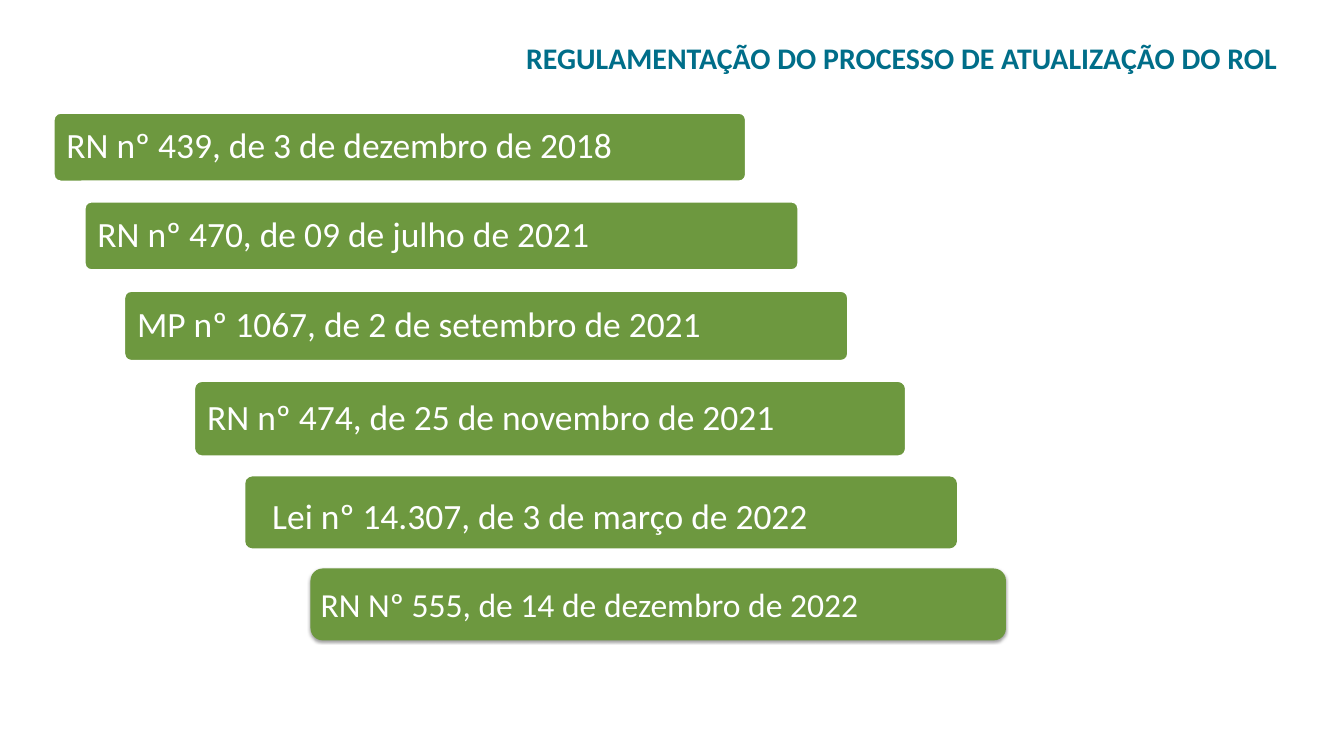
import pptx
import pptx.util
import pptx.dml.color
import pptx.enum.shapes
import pptx.enum.text
from lxml import etree

Inches, Pt = pptx.util.Inches, pptx.util.Pt
Align = pptx.enum.text.PP_ALIGN

THEME = {
    "font": "Calibri",
    "teal": "006E89",
    "green": "6D983F",
    "white": "FFFFFF",
    "black": "000000",
    "title": 32,
    "step": 38,
    "last": 36,
}

TITLE = "REGULAMENTAÇÃO DO PROCESSO DE ATUALIZAÇÃO DO ROL"

BASE = {"size": THEME["step"], "space": 0.9, "inset": (0.16, 0, 0.16, 0)}
LAW = {**BASE, "inset": (0.37, 0.16, 0.16, 0)}
LAST = {"size": THEME["last"]}

STEPS = [
    ("RN nº 439, de 3 de dezembro de 2018", (0.8, 1.68, 10.3, 1.02), 0.1, True, BASE),
    ("RN nº 470, de 09 de julho de 2021", (1.26, 3, 10.62, 1.02), 0.1, True, BASE),
    ("MP nº 1067, de 2 de setembro de 2021", (1.85, 4.33, 10.77, 1.04), 0.1, True, BASE),
    ("RN nº 474, de 25 de novembro de 2021", (2.89, 5.67, 10.59, 1.12), 0.1, True, BASE),
    ("Lei nº 14.307, de 3 de março de 2022", (3.65, 7.09, 10.59, 1.07), 0.1, False, LAW),
    ("RN Nº 555, de 14 de dezembro de 2022", (4.62, 8.46, 10.35, 1.07), 0.17, False, LAST),
]


def color(name):
    return pptx.dml.color.RGBColor.from_string(THEME[name])


def write(shape, text, size, tint="white", bold=False, align=Align.LEFT,
          space=1.0, inset=(0.1, 0.05, 0.1, 0.05)):
    frame = shape.text_frame
    frame.word_wrap = True
    frame.vertical_anchor = pptx.enum.text.MSO_ANCHOR.MIDDLE
    left, top, right, bottom = map(Inches, inset)
    frame.margin_left, frame.margin_top = left, top
    frame.margin_right, frame.margin_bottom = right, bottom
    para = frame.paragraphs[0]
    para.alignment = align
    para.line_spacing = space
    run = para.add_run()
    run.text = text
    run.font.name = THEME["font"]
    run.font.size = Pt(size)
    run.font.bold = bold
    run.font.color.rgb = color(tint)


def shade(shape):
    space = pptx.oxml.ns.nsdecls("a")
    glow = etree.fromstring(
        f'<a:outerShdw {space} blurRad="{Pt(3.1)}" dist="{Pt(1.6)}" dir="5400000" '
        f'rotWithShape="0"><a:srgbClr val="{THEME["black"]}">'
        '<a:alpha val="38000"/></a:srgbClr></a:outerShdw>'
    )
    shape.element.spPr.find(pptx.oxml.ns.qn("a:effectLst")).append(glow)


def add_bar(slide, box, curve, edge):
    kind = pptx.enum.shapes.MSO_SHAPE.ROUNDED_RECTANGLE
    bar = slide.shapes.add_shape(kind, *map(Inches, box))
    bar.adjustments[0] = curve
    bar.shadow.inherit = False
    bar.fill.solid()
    bar.fill.fore_color.rgb = color("green")
    if edge:
        bar.line.color.rgb = color("white")
        bar.line.width = Pt(2)
    else:
        bar.line.fill.background()
    return bar


def main():
    deck = pptx.Presentation()
    deck.slide_width, deck.slide_height = Inches(20), Inches(11.25)
    slide = deck.slides.add_slide(deck.slide_layouts[6])
    head = slide.shapes.add_textbox(*map(Inches, (-0.4, 0.4, 20, 0.9)))
    write(head, TITLE, THEME["title"], tint="teal", bold=True,
          align=Align.RIGHT, inset=(0.1, 0.05, 0.59, 0.05))
    for text, box, curve, edge, style in STEPS:
        bar = add_bar(slide, box, curve, edge)
        write(bar, text, **style)
    shade(bar)
    deck.save("out.pptx")


if __name__ == "__main__":
    main()
